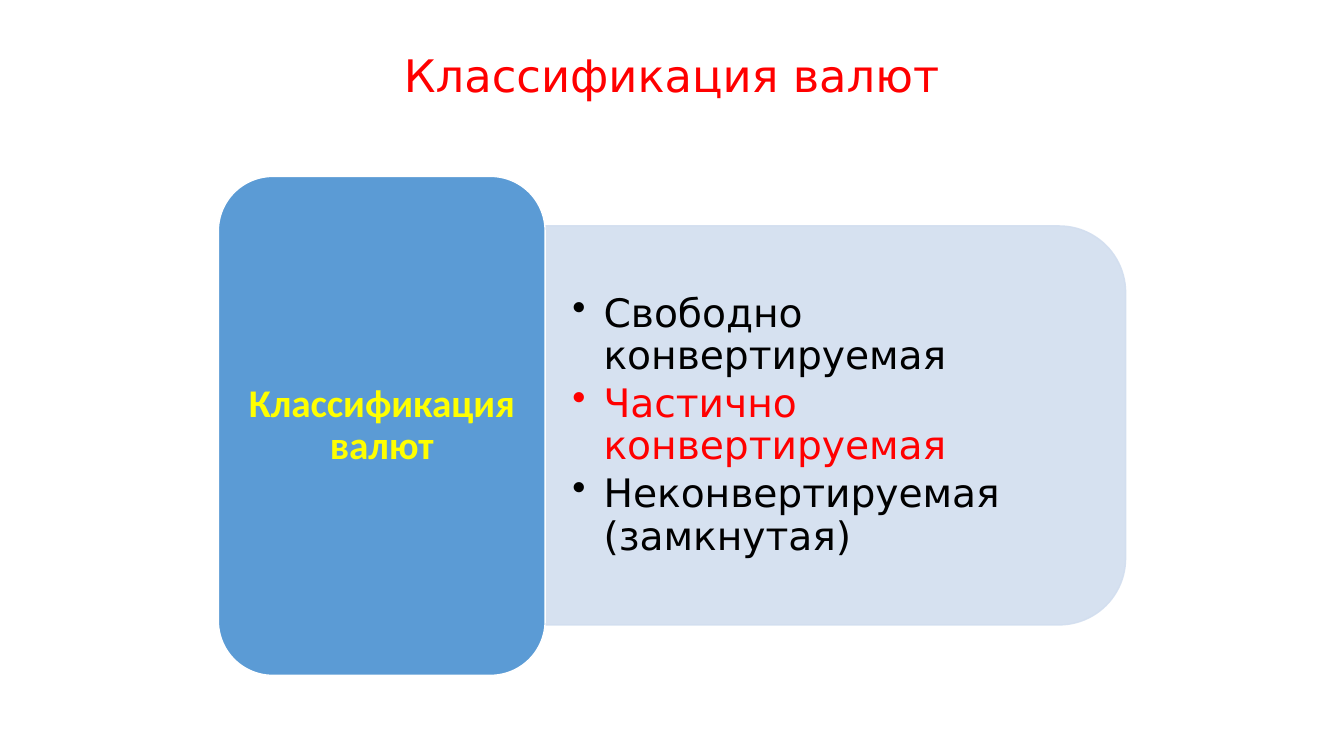
from lxml.etree import SubElement
from pptx import Presentation
from pptx.dml.color import RGBColor
from pptx.enum.shapes import MSO_SHAPE
from pptx.enum.text import MSO_ANCHOR, MSO_AUTO_SIZE, PP_ALIGN
from pptx.oxml.ns import qn
from pptx.util import Inches, Pt


def rgb(value):
    return RGBColor.from_string(value)


class Deck:
    COLS, ROWS = 16, 9
    RED, YELLOW, BLACK, WHITE = "FF0000", "FFFF00", "000000", "FFFFFF"
    BLUE, PALE = "5B9BD5", "D2DEEF"
    SANS, BOLD = "DejaVu Sans", "Calibri"

    def __init__(self):
        self.prs = Presentation()
        self.prs.slide_width, self.prs.slide_height = Inches(13.333), Inches(7.5)
        self.s = self.prs.slides.add_slide(self.prs.slide_layouts[5])

    def grid(self, x, y, w, h):
        col = self.prs.slide_width / self.COLS
        row = self.prs.slide_height / self.ROWS
        return [round(v) for v in (x * col, y * row, w * col, h * row)]

    def frame(self, tf, dx, dy):
        tf.word_wrap = True
        tf.auto_size = MSO_AUTO_SIZE.NONE
        tf.vertical_anchor = MSO_ANCHOR.MIDDLE
        tf.margin_left = tf.margin_right = Inches(dx)
        tf.margin_top = tf.margin_bottom = Inches(dy)

    def style(self, p, size, font, color, align, bold=False):
        p.alignment = align
        p.line_spacing = 0.9
        for r in p.runs:
            r.font.size, r.font.name, r.font.bold = Pt(size), font, bold
            r.font.color.rgb = rgb(color)

    def title(self, text, *cells):
        sp = self.s.shapes.title
        sp.left, sp.top, sp.width, sp.height = self.grid(*cells)
        self.frame(sp.text_frame, 0.1, 0.05)
        sp.text_frame.text = text
        self.style(sp.text_frame.paragraphs[0], 32, self.SANS, self.RED, PP_ALIGN.CENTER)

    def shape(self, kind, fill, line, box):
        sp = self.s.shapes.add_shape(kind, *box)
        sp.shadow.inherit = False
        sp.fill.solid()
        sp.fill.fore_color.rgb = rgb(fill)
        sp.line.color.rgb = rgb(line)
        sp.line.width = Pt(1)
        return sp

    def panel(self, *cells):
        x, y, w, h = self.grid(*cells)
        shift = (w - h) // 2
        sp = self.shape(MSO_SHAPE.ROUND_2_SAME_RECTANGLE, self.PALE, self.PALE,
                        (x + shift, y - shift, h, w))
        sp.rotation = 90
        for color in sp._element.spPr.iter(qn("a:srgbClr")):
            SubElement(color, qn("a:alpha"), val="90000")

    def heading(self, text, *cells):
        sp = self.shape(MSO_SHAPE.ROUNDED_RECTANGLE, self.BLUE, self.WHITE, self.grid(*cells))
        self.frame(sp.text_frame, 0.12, 0.06)
        sp.text_frame.text = text
        self.style(sp.text_frame.paragraphs[0], 28, self.BOLD, self.YELLOW,
                   PP_ALIGN.CENTER, True)

    def bullets(self, items, *cells):
        tf = self.s.shapes.add_textbox(*self.grid(*cells)).text_frame
        self.frame(tf, 0.27, 0.14)
        tf.text = "\n".join(text for text, color in items)
        for p, (text, color) in zip(tf.paragraphs, items):
            self.style(p, 28, self.SANS, color, PP_ALIGN.LEFT)
            p.level = 1
            p.space_after = Pt(4)
            pPr = p._p.get_or_add_pPr()
            pPr.set("marL", str(Inches(0.31)))
            pPr.set("indent", str(-Inches(0.31)))
            SubElement(pPr, qn("a:buChar"), char="•")


def main():
    deck = Deck()
    deck.title("Классификация валют", 1.1, 0.48, 13.8, 0.89)
    deck.panel(6.49, 2.69, 6.91, 4.75)
    deck.bullets([
        ("Свободно конвертируемая", deck.BLACK),
        ("Частично конвертируемая", deck.RED),
        ("Неконвертируемая (замкнутая)", deck.BLACK),
    ], 6.49, 2.93, 6.68, 4.28)
    deck.heading("Классификация валют", 2.6, 2.1, 3.89, 5.94)
    deck.prs.save("out.pptx")


if __name__ == "__main__":
    main()
